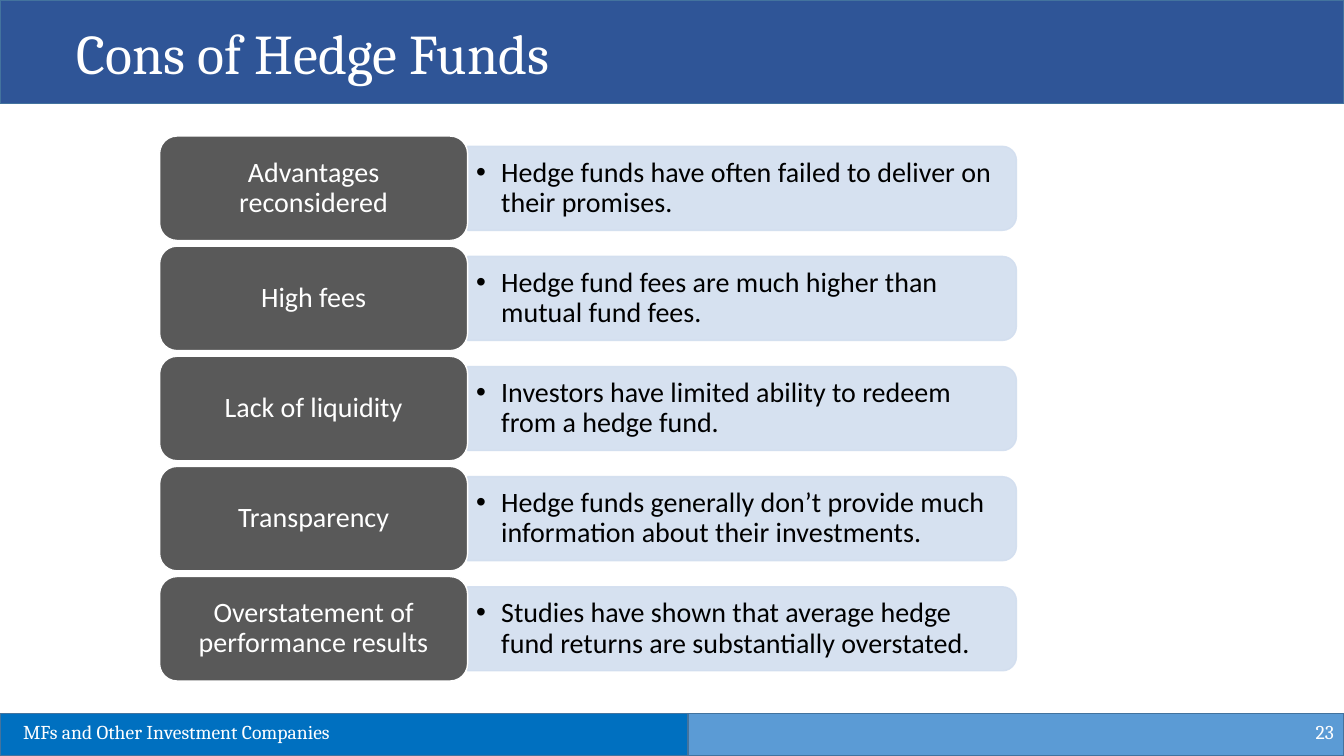
from dataclasses import dataclass

from lxml import etree
from pptx import Presentation
from pptx import util as u
from pptx.dml.color import RGBColor
from pptx.enum import shapes, text
from pptx.oxml import ns


@dataclass(frozen=True)
class Theme:
    header: str = "2F5597"
    footer_left: str = "0070C0"
    footer_right: str = "5B9BD5"
    bar_line: str = "43739E"
    label: str = "595959"
    panel: str = "D2DEEF"
    white: str = "FFFFFF"
    black: str = "000000"
    heading_font: str = "Cambria"
    body_font: str = "Calibri"
    title_size: int = 40
    body_size: int = 20
    footer_size: int = 14


theme = Theme()
Pt = u.Pt

presentation = Presentation()
presentation.slide_width, presentation.slide_height = Pt(960), Pt(540)
slide = presentation.slides.add_slide(presentation.slide_layouts[6])


def add_block(kind, left, top, width, height, fill, line):
    shape = slide.shapes.add_shape(kind, Pt(left), Pt(top), Pt(width), Pt(height))
    shape.shadow.inherit = False
    shape.fill.solid()
    shape.fill.fore_color.rgb = RGBColor.from_string(fill)
    shape.line.color.rgb = RGBColor.from_string(line)
    shape.line.width = Pt(1)
    return shape


def write(shape, words, font, size, color, align, anchor, margins=(7.2, 3.6)):
    frame = shape.text_frame
    frame.word_wrap = True
    frame.vertical_anchor = anchor
    frame.margin_left = frame.margin_right = Pt(margins[0])
    frame.margin_top = frame.margin_bottom = Pt(margins[1])
    paragraph = frame.paragraphs[0]
    paragraph.alignment = align
    run = paragraph.add_run()
    run.text = words
    run.font.name = font
    run.font.size = Pt(size)
    run.font.color.rgb = RGBColor.from_string(color)
    return paragraph


ALIGN, ANCHOR, KIND = text.PP_ALIGN, text.MSO_ANCHOR, shapes.MSO_SHAPE

# Header and footer bars
for left, top, width, height, fill in [
    (0, 0, 960, 74, theme.header),
    (0, 509.5, 491.5, 30.5, theme.footer_left),
    (491.5, 509.5, 468.5, 30.5, theme.footer_right),
]:
    add_block(KIND.RECTANGLE, left, top, width, height, fill, theme.bar_line)

# Title, footer and slide number
for left, top, width, height, words, size, align, anchor in [
    (47.5, 9.4, 870, 55.5, "Cons of Hedge Funds", theme.title_size, ALIGN.LEFT, ANCHOR.TOP),
    (9.4, 510.5, 399, 24.5, "MFs and Other Investment Companies", theme.footer_size,
     ALIGN.LEFT, ANCHOR.TOP),
    (744, 508.5, 216, 28.8, "23", theme.footer_size, ALIGN.RIGHT, ANCHOR.MIDDLE),
]:
    box = slide.shapes.add_textbox(Pt(left), Pt(top), Pt(width), Pt(height))
    write(box, words, theme.heading_font, size, theme.white, align, anchor)

# Rows: a label on the left, a panel with one bullet on the right
cons = [
    ("Advantages reconsidered", "Hedge funds have often failed to deliver on their promises."),
    ("High fees", "Hedge fund fees are much higher than mutual fund fees."),
    ("Lack of liquidity", "Investors have limited ability to redeem from a hedge fund."),
    ("Transparency",
     "Hedge funds generally don’t provide much information about their investments."),
    ("Overstatement of performance results",
     "Studies have shown that average hedge fund returns are substantially overstated."),
]
first_center, row_step = 134.5, 78.66
label_left, label_width, label_height = 114, 220, 74.6
panel_left, panel_width, panel_height = label_left + label_width, 392, 60
text_width, text_height = 389, 54

for index, (name, reason) in enumerate(cons):
    center = first_center + index * row_step

    # Panel, turned so that its rounded corners face right
    panel = add_block(
        KIND.ROUND_2_SAME_RECTANGLE,
        panel_left + (panel_width - panel_height) / 2, center - panel_width / 2,
        panel_height, panel_width, theme.panel, theme.panel)
    panel.rotation = 90
    for color in panel._element.spPr.iter(ns.qn("a:srgbClr")):
        etree.SubElement(color, ns.qn("a:alpha"), val="90000")

    # Bullet text
    box = slide.shapes.add_textbox(
        Pt(panel_left), Pt(center - text_height / 2), Pt(text_width), Pt(text_height))
    paragraph = write(box, reason, theme.body_font, theme.body_size, theme.black,
                      ALIGN.LEFT, ANCHOR.MIDDLE, (6, 3))
    paragraph.line_spacing = 0.9
    properties = paragraph._p.get_or_add_pPr()
    properties.set("marL", str(Pt(18)))
    properties.set("indent", str(Pt(-18)))
    etree.SubElement(properties, ns.qn("a:buFont"), typeface="Arial")
    etree.SubElement(properties, ns.qn("a:buChar"), char="•")

    # Label
    label = add_block(KIND.ROUNDED_RECTANGLE, label_left, center - label_height / 2,
                      label_width, label_height, theme.label, theme.white)
    paragraph = write(label, name, theme.body_font, theme.body_size, theme.white,
                      ALIGN.CENTER, ANCHOR.MIDDLE, (9.6, 6.6))
    paragraph.line_spacing = 0.9

presentation.save("out.pptx")
